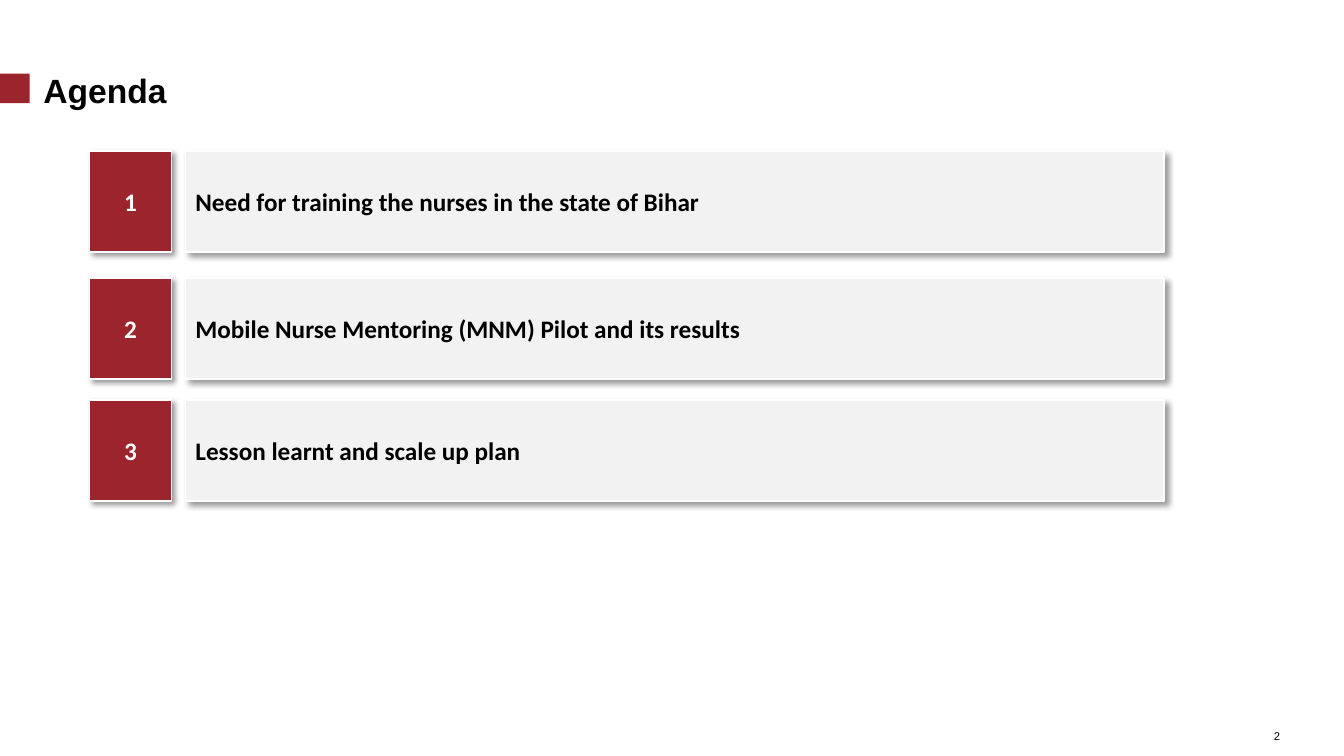
from dataclasses import dataclass

from lxml import etree
from pptx import Presentation
from pptx.dml.color import RGBColor
from pptx.enum.shapes import MSO_SHAPE
from pptx.enum.text import MSO_ANCHOR, PP_ALIGN
from pptx.oxml.ns import qn
from pptx.util import Pt

RECTANGLE = MSO_SHAPE.RECTANGLE
MIDDLE, BOTTOM = MSO_ANCHOR.MIDDLE, MSO_ANCHOR.BOTTOM
LEFT, CENTER, RIGHT = PP_ALIGN.LEFT, PP_ALIGN.CENTER, PP_ALIGN.RIGHT


@dataclass(frozen=True)
class Theme:
    red: str = "9B242D"
    grey: str = "F2F2F2"
    white: str = "FFFFFF"
    black: str = "000000"
    heading_font: str = "Arial"
    body_font: str = "Calibri"
    title_size: int = 24
    item_size: int = 18
    number_size: int = 8


THEME = Theme()
AGENDA = [
    (108, "Need for training the nurses in the state of Bihar"),
    (198.72, "Mobile Nurse Mentoring (MNM) Pilot and its results"),
    (285.84, "Lesson learnt and scale up plan"),
]
ROW_HEIGHT = 72
NUMBER_LEFT, NUMBER_WIDTH = 64.08, 58.32
TOPIC_LEFT, TOPIC_WIDTH = 132.48, 699.12


def write_text(shape, text, font_name, size, color, bold, alignment, anchor):
    frame = shape.text_frame
    frame.word_wrap = True
    frame.vertical_anchor = anchor
    paragraph = frame.paragraphs[0]
    paragraph.alignment = alignment
    run = paragraph.add_run()
    run.text = text
    run.font.name = font_name
    run.font.size = Pt(size)
    run.font.bold = bold
    run.font.color.rgb = RGBColor.from_string(color)


def add_rectangle(slide, left, top, width, height, color):
    shape = slide.shapes.add_shape(RECTANGLE, Pt(left), Pt(top), Pt(width), Pt(height))
    shape.shadow.inherit = False
    shape.fill.solid()
    shape.fill.fore_color.rgb = RGBColor.from_string(color)
    shape.line.fill.background()
    return shape


def add_shadow(shape):
    effects = shape._element.spPr.find(qn("a:effectLst"))
    shadow = etree.SubElement(
        effects, qn("a:outerShdw"), blurRad=str(Pt(4)), dist=str(Pt(3)),
        dir=str(45 * 60000), algn="tl", rotWithShape="0")
    color = etree.SubElement(shadow, qn("a:srgbClr"), val=THEME.black)
    etree.SubElement(color, qn("a:alpha"), val="40000")


def add_card(slide, left, top, width, fill, text, color, alignment):
    card = add_rectangle(slide, left, top, width, ROW_HEIGHT, fill)
    card.line.color.rgb = RGBColor.from_string(THEME.white)
    card.line.width = Pt(1)
    add_shadow(card)
    write_text(card, text, THEME.body_font, THEME.item_size, color, True, alignment, MIDDLE)


def add_label(slide, left, top, width, height, text, size, bold, alignment, anchor):
    label = slide.shapes.add_textbox(Pt(left), Pt(top), Pt(width), Pt(height))
    frame = label.text_frame
    frame.margin_left = frame.margin_right = frame.margin_top = frame.margin_bottom = 0
    write_text(label, text, THEME.heading_font, size, THEME.black, bold, alignment, anchor)


def main():
    presentation = Presentation()
    presentation.slide_width, presentation.slide_height = Pt(960), Pt(540)
    slide = presentation.slides.add_slide(presentation.slide_layouts[6])

    add_rectangle(slide, 0, 52.56, 21.2, 21.2, THEME.red)
    add_label(slide, 894.24, 514.08, 20.16, 16.56, "2", THEME.number_size, False, RIGHT, BOTTOM)
    add_label(slide, 31, 50.4, 928.8, 27.36, "Agenda", THEME.title_size, True, LEFT, MIDDLE)

    for number, (top, topic) in enumerate(AGENDA, start=1):
        add_card(slide, NUMBER_LEFT, top, NUMBER_WIDTH, THEME.red, str(number), THEME.white, CENTER)
        add_card(slide, TOPIC_LEFT, top, TOPIC_WIDTH, THEME.grey, topic, THEME.black, LEFT)

    presentation.save("out.pptx")


if __name__ == "__main__":
    main()
